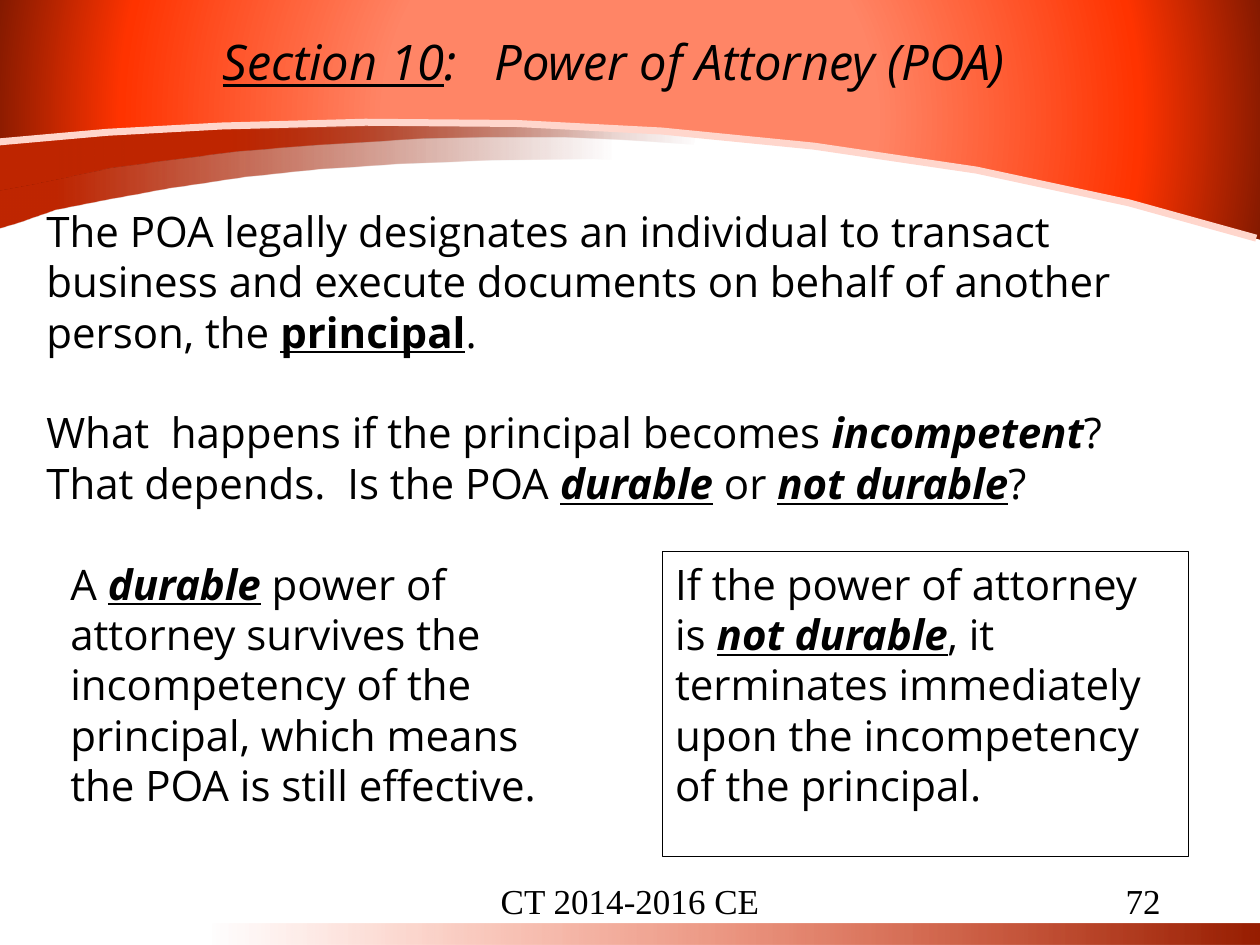
from pptx import Presentation
from pptx.dml.color import RGBColor
from pptx.enum.shapes import MSO_SHAPE as SHAPE
from pptx.enum.text import MSO_ANCHOR as ANCHOR, PP_ALIGN as ALIGN
from pptx.oxml import parse_xml
from pptx.oxml.ns import nsdecls
from pptx.util import Inches, Pt

COLORS = {
    "black": "000000", "white": "FFFFFF", "edge": "FFD6CC",
    "light": "FF8566", "red": "FF3300", "mid": "D72B00",
    "brick": "BF2600", "rust": "971E00", "dark": "801900",
}


def add_text(tf, paragraphs, size=24, font="Open Sans", align=ALIGN.LEFT,
             anchor=ANCHOR.TOP, wrap=True, gaps=()):
    tf.word_wrap = wrap
    tf.vertical_anchor = anchor
    for i, runs in enumerate(paragraphs):
        p = tf.add_paragraph() if i else tf.paragraphs[0]
        p.alignment = align
        if i in gaps:
            p.space_before = Pt(size * 1.2)
        for text, style in runs:
            r = p.add_run()
            r.text = text
            r.font.size = Pt(size)
            r.font.name = font
            r.font.color.rgb = RGBColor.from_string(COLORS["black"])
            r.font.bold = "b" in style
            r.font.italic = "i" in style
            r.font.underline = "u" in style


def set_gradient(sp, stops, direction):
    sp.shadow.inherit = False
    sp.line.fill.background()
    sp.fill.background()
    gs = "".join(
        f'<a:gs pos="{pos * 1000}"><a:srgbClr val="{COLORS[name]}">'
        f'<a:alpha val="{alpha * 1000}"/></a:srgbClr></a:gs>'
        for pos, name, alpha in stops)
    grad = parse_xml(f'<a:gradFill {nsdecls("a")} rotWithShape="1">'
                     f'<a:gsLst>{gs}</a:gsLst>{direction}</a:gradFill>')
    spPr = sp._element.spPr
    spPr.replace(spPr.find("{*}noFill"), grad)


prs = Presentation()
prs.slide_width, prs.slide_height = Inches(10), Inches(7.5)
s = prs.slides.add_slide(prs.slide_layouts[6])
s.background.fill.solid()
s.background.fill.fore_color.rgb = RGBColor.from_string(COLORS["white"])

RIGHTWARD = '<a:lin ang="0" scaled="0"/>'
LEFTWARD = '<a:lin ang="10800000" scaled="0"/>'
RADIAL = ('<a:path path="circle"><a:fillToRect l="50000" t="50000" '
          'r="50000" b="50000"/></a:path>')

bar = s.shapes.add_shape(SHAPE.RECTANGLE, Inches(1.67), Inches(7.33),
                         Inches(8.33), Inches(0.17))
set_gradient(bar, [(0, "rust", 100), (50, "mid", 50), (100, "red", 0)], LEFTWARD)

lower_swoosh = [
    (-0.02, 1.81), (0.15, 1.76), (0.44, 1.66), (0.79, 1.59), (1.34, 1.49),
    (1.95, 1.4), (2.53, 1.34), (3.15, 1.3), (3.9, 1.27), (4.71, 1.26),
    (5.07, 1.28), (5.07, 0.94), (-0.03, 1.09)]
upper_swoosh = [
    (-0.02, 1.51), (0.35, 1.44), (0.88, 1.33), (1.26, 1.28), (1.89, 1.2),
    (2.53, 1.15), (3.36, 1.1), (3.84, 1.09), (4.48, 1.09), (5.1, 1.12),
    (5.5, 1.15), (5.54, 0.97), (4.53, 0.84), (-0.02, 0.91)]
header = [
    (-0.02, 1.12), (0.63, 1.07), (1.28, 1.02), (2.09, 0.98), (2.84, 0.97),
    (3.51, 0.97), (4.37, 0.99), (5.14, 1.03), (6.1, 1.12), (6.99, 1.24),
    (7.82, 1.38), (8.55, 1.52), (9.1, 1.65), (9.72, 1.81), (10.03, 1.91),
    (10.01, 0), (-0.03, -0.01)]
header_edge = [
    (-0.05, 1.13), (0.85, 1.05), (1.76, 1), (2.9, 0.97), (4.1, 0.98),
    (5.25, 1.04), (6.46, 1.16), (7.75, 1.35), (8.96, 1.61), (9.97, 1.89)]

for points, stops, direction in [
    (lower_swoosh, [(9, "brick", 100), (96, "dark", 0)], RIGHTWARD),
    (upper_swoosh, [(33, "brick", 100), (100, "dark", 0)], RIGHTWARD),
    (header, [(38, "light", 100), (79, "red", 100), (100, "dark", 100)], RADIAL),
    (header_edge, None, None),
]:
    start, *rest = [(Inches(x), Inches(y)) for x, y in points]
    fb = s.shapes.build_freeform(*start)
    fb.add_line_segments(rest, close=stops is not None)
    sp = fb.convert_to_shape()
    if stops:
        set_gradient(sp, stops, direction)
    else:
        sp.shadow.inherit = False
        sp.fill.background()
        sp.line.color.rgb = RGBColor.from_string(COLORS["edge"])
        sp.line.width = Pt(4)

footer = dict(size=20, font="Times New Roman", anchor=ANCHOR.MIDDLE)
title = [[("Section 10", "iu"), (":   Power of Attorney (POA)", "i")]]
body = [
    [("The POA legally designates an individual to transact business and "
      "execute documents on behalf of another person, the ", ""),
     ("principal", "bu"), (".", "")],
    [("What  happens if the principal becomes ", ""),
     ("incompetent", "bi"), ("?", "")],
    [("That depends.  Is the POA ", ""), ("durable", "biu"), (" or ", ""),
     ("not durable", "biu"), ("?", "")],
]
for box, paragraphs, style in [
    ((3.31, 6.95, 3.38, 0.4), [[("CT 2014-2016 CE", "")]],
     dict(footer, align=ALIGN.CENTER)),
    ((7.06, 6.95, 2.25, 0.4), [[("72", "")]], dict(footer, align=ALIGN.RIGHT)),
    ((1.67, 0.2, 7.18, 0.57), title, dict(size=28, wrap=False)),
    ((0.27, 1.58, 9.46, 3.2), body, dict(gaps=(1,))),
]:
    tb = s.shapes.add_textbox(*map(Inches, box))
    add_text(tb.text_frame, paragraphs, **style)

for left, width, line, runs in [
    (0.46, 4.25, "white",
     [("A ", ""), ("durable", "biu"),
      (" power of attorney survives the incompetency of the principal, "
       "which means the POA is still effective.", "")]),
    (5.26, 4.17, "black",
     [("If the power of attorney is ", ""), ("not durable", "biu"),
      (", it terminates immediately upon the incompetency of the "
       "principal.", "")]),
]:
    sp = s.shapes.add_shape(SHAPE.RECTANGLE, Inches(left), Inches(4.38),
                            Inches(width), Inches(2.42))
    sp.shadow.inherit = False
    sp.fill.solid()
    sp.fill.fore_color.rgb = RGBColor.from_string(COLORS["white"])
    sp.line.color.rgb = RGBColor.from_string(COLORS[line])
    sp.line.width = Pt(0.5)
    add_text(sp.text_frame, [runs])

prs.save("out.pptx")
